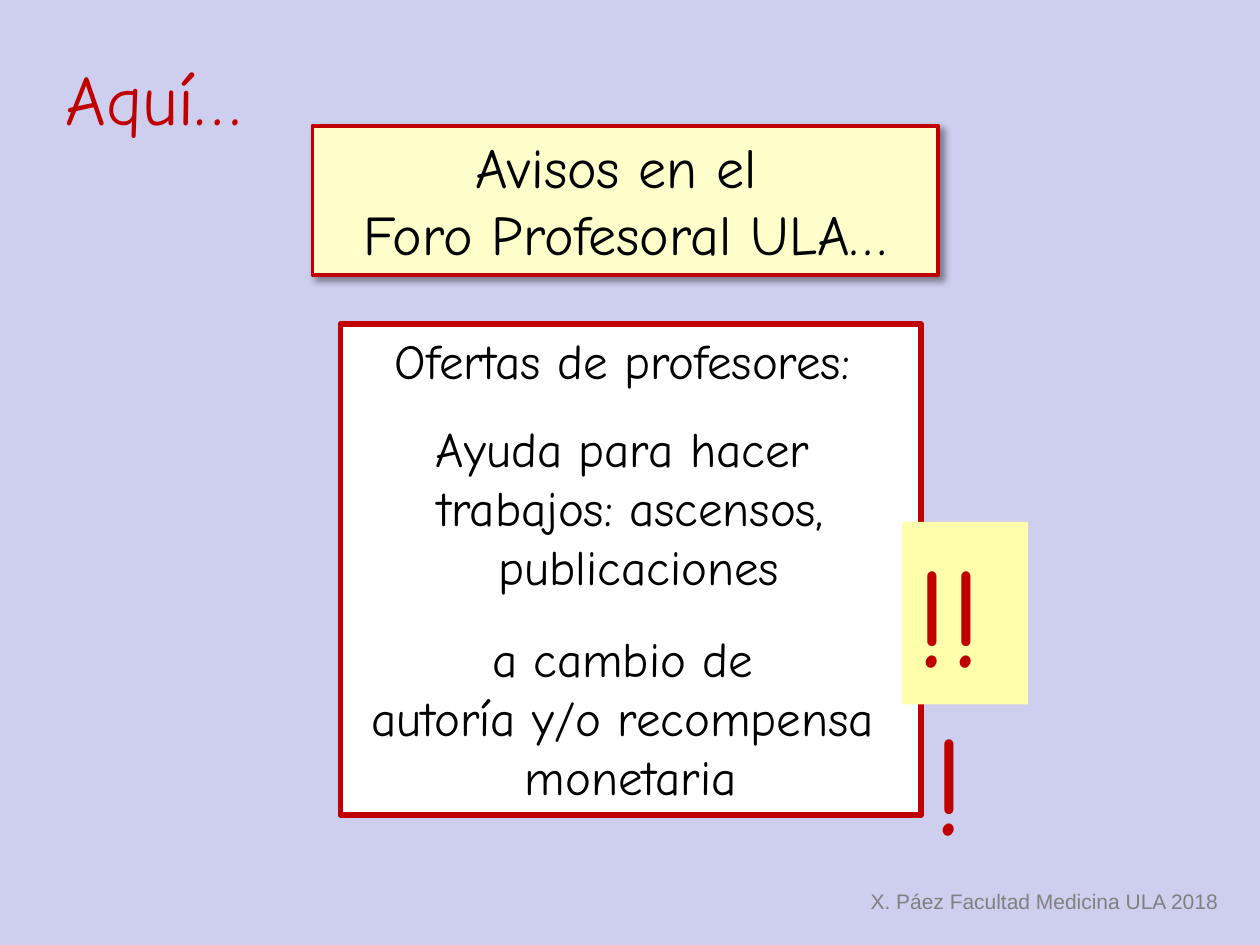
import pptx
import pptx.util
import pptx.dml.color
import pptx.enum.shapes
import pptx.enum.text
import pptx.oxml
import pptx.oxml.ns

Cm, Pt = pptx.util.Cm, pptx.util.Pt
ALIGN = pptx.enum.text.PP_ALIGN
COLORS = {"back": "CECEEF", "cream": "FFFFCC", "white": "FFFFFF",
          "lemon": "FFFFAB", "red": "C00000", "black": "000000", "gray": "808080"}
HAND = "Comic Neue"

# Each line: text, space before in points
TITLE = [("Aquí…", 0)]
NOTICE = [("Avisos en el ", 0), ("Foro Profesoral ULA…", 0)]
OFFERS = [
    ("Ofertas de profesores: ", 0),
    ("Ayuda para hacer ", 17),
    ("trabajos: ascensos,", 0),
    (" publicaciones", 0),
    ("a cambio de ", 19),
    ("autoría y/o recompensa ", 0),
    ("monetaria", 0),
]
ALARM = [("!!!", 0)]
CREDIT = [("X. Páez Facultad Medicina ULA 2018", 0)]

# Each panel: lines, place in cm, fill, line width, text size, text color
PANELS = {
    "notice": (NOTICE, (6.3, 2.54, 12.62, 3), "cream", 2.25, 32, "black"),
    "offers": (OFFERS, (6.86, 6.53, 11.71, 9.9), "white", 3, 28, "black"),
    "alarm": (ALARM, (18.19, 10.52, 2.54, 3.68), "lemon", 0, 80, "red"),
}


def color(name):
    return pptx.dml.color.RGBColor.from_string(COLORS[name])


def place(shape, box):
    shape.left, shape.top, shape.width, shape.height = map(Cm, box)


def write(shape, lines, size, ink, face=HAND, align=ALIGN.CENTER, wrap=False):
    frame = shape.text_frame
    frame.word_wrap = wrap
    frame.auto_size = pptx.enum.text.MSO_AUTO_SIZE.NONE
    frame.vertical_anchor = pptx.enum.text.MSO_ANCHOR.TOP
    for i, (text, gap) in enumerate(lines):
        para = frame.paragraphs[0] if i == 0 else frame.add_paragraph()
        para.alignment = align
        para.space_before = Pt(gap)
        run = para.add_run()
        run.text = text
        run.font.name = face
        run.font.size = Pt(size)
        run.font.color.rgb = color(ink)


def add_panel(slide, lines, box, fill, width, size, ink):
    kind = pptx.enum.shapes.MSO_SHAPE.RECTANGLE
    shape = slide.shapes.add_shape(kind, *map(Cm, box))
    shape.shadow.inherit = False
    shape.fill.solid()
    shape.fill.fore_color.rgb = color(fill)
    if width:
        shape.line.color.rgb = color("red")
        shape.line.width = Pt(width)
    else:
        shape.line.fill.background()
    write(shape, lines, size, ink, wrap=True)
    return shape


def cast_shadow(shape):
    effects = shape._element.spPr.find(pptx.oxml.ns.qn("a:effectLst"))
    effects.append(pptx.oxml.parse_xml(
        f'<a:outerShdw {pptx.oxml.ns.nsdecls("a")} blurRad="{Pt(4)}" dist="{Pt(3)}"'
        ' dir="2700000" algn="tl" rotWithShape="0">'
        f'<a:srgbClr val="{COLORS["black"]}"><a:alpha val="40000"/></a:srgbClr>'
        '</a:outerShdw>'))


def main():
    deck = pptx.Presentation()
    deck.slide_width, deck.slide_height = Cm(25.4), Cm(19.05)
    slide = deck.slides.add_slide(deck.slide_layouts[5])
    slide.background.fill.solid()
    slide.background.fill.fore_color.rgb = color("back")

    title = slide.shapes.title
    place(title, (0.84, 1, 4.5, 1.96))
    write(title, TITLE, 40, "red")

    panels = {name: add_panel(slide, *panel) for name, panel in PANELS.items()}
    cast_shadow(panels["notice"])
    # Narrow the text area so that two marks fit on the first line
    alarm = panels["alarm"].text_frame
    alarm.margin_left, alarm.margin_right = Cm(0), Cm(0.66)

    credit = slide.shapes.add_textbox(*map(Cm, (17.3, 17.78, 7.77, 0.76)))
    write(credit, CREDIT, 12, "gray", "Arial", ALIGN.LEFT)
    deck.save("out.pptx")


if __name__ == "__main__":
    main()
